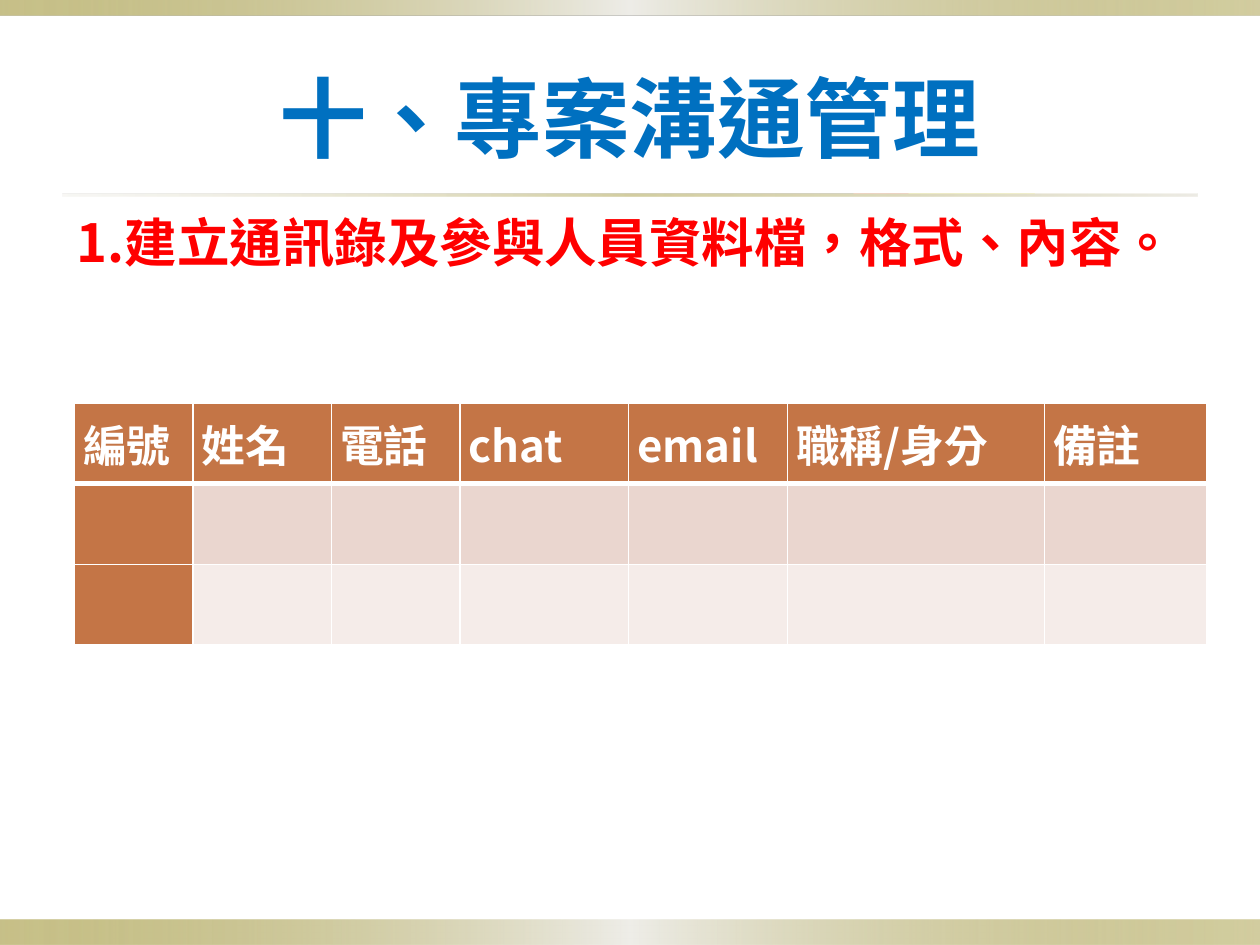
from pptx import Presentation
from pptx.dml.color import RGBColor
from pptx.enum.shapes import MSO_SHAPE
from pptx.enum.text import MSO_ANCHOR, MSO_AUTO_SIZE, PP_ALIGN
from pptx.oxml import parse_xml
from pptx.oxml.ns import nsdecls
from pptx.util import Inches, Pt

FONT = "Noto Sans CJK SC"
LANGUAGE = "zh-TW"
COLORS = {
    "title": "0070C0",
    "body": "FF0000",
    "white": "FFFFFF",
    "header": "C47546",
    "band_dark": "EAD6CF",
    "band_light": "F5ECE9",
    "olive": "918415",
    "pale": "EEEDE8",
    "sand": "DCD9CC",
}

TITLE = "十、專案溝通管理"
BODY = "1.建立通訊錄及參與人員資料檔，格式、內容。"
COLUMNS = [
    ("編號", 0.94), ("姓名", 1.1), ("電話", 1.02), ("chat", 1.34),
    ("email", 1.26), ("職稱/身分", 2.04), ("備註", 1.29),
]
ROW_FILLS = ["header", "band_dark", "band_light"]
ROW_HEIGHT = 0.64

# Gradient stops: position %, colour, opacity %
BAND = [(0, "olive", 50), (50, "pale", 100), (100, "olive", 40)]
RULE = [(0, "sand", 20), (50, "olive", 40), (100, "sand", 50)]
STRIPS = [
    ((0, 7.3, 10, 0.2), BAND),
    ((0, 0, 10, 0.12), BAND),
    ((0.5, 1.54, 9, 0.02), RULE),
]


def color(name):
    return RGBColor.from_string(COLORS[name])


def write(frame, text, size, color_name):
    frame.text = text
    for span in frame.paragraphs[0].runs:
        span.font.name = FONT
        span.font.size = Pt(size)
        span.font.bold = True
        span.font.color.rgb = color(color_name)
        properties = span.font._element
        properties.set("lang", LANGUAGE)
        properties.find("{*}latin").addnext(
            parse_xml(f'<a:ea {nsdecls("a")} typeface="{FONT}"/>'))


def add_strip(slide, place, stops):
    strip = slide.shapes.add_shape(MSO_SHAPE.RECTANGLE, *map(Inches, place))
    strip.shadow.inherit = False
    strip.line.fill.background()
    stop_xml = "".join(
        f'<a:gs pos="{position * 1000}"><a:srgbClr val="{COLORS[name]}">'
        f'<a:alpha val="{opacity * 1000}"/></a:srgbClr></a:gs>'
        for position, name, opacity in stops)
    strip._element.spPr.find("{*}prstGeom").addnext(parse_xml(
        f'<a:gradFill {nsdecls("a")} rotWithShape="1"><a:gsLst>{stop_xml}'
        '</a:gsLst><a:lin ang="0" scaled="0"/></a:gradFill>'))


def add_borders(cell, top, bottom):
    """Draw white cell edges; top and bottom are widths in points."""
    properties = cell._tc.get_or_add_tcPr()
    for side, width in (("L", 1), ("R", 1), ("T", top), ("B", bottom)):
        properties.append(parse_xml(
            f'<a:ln{side} {nsdecls("a")} w="{Pt(width)}"><a:solidFill>'
            f'<a:srgbClr val="{COLORS["white"]}"/></a:solidFill></a:ln{side}>'))


def add_contact_table(slide):
    width = sum(column_width for _, column_width in COLUMNS)
    table = slide.shapes.add_table(
        len(ROW_FILLS), len(COLUMNS), Inches(0.59), Inches(3.2),
        Inches(width), Inches(ROW_HEIGHT * len(ROW_FILLS))).table
    table.first_col = True
    for column, (_, column_width) in zip(table.columns, COLUMNS):
        column.width = Inches(column_width)
    for row_index, fill_name in enumerate(ROW_FILLS):
        for column_index, (heading, _) in enumerate(COLUMNS):
            cell = table.cell(row_index, column_index)
            cell.margin_left = cell.margin_right = Inches(0.07)
            cell.margin_top = cell.margin_bottom = Inches(0.07)
            add_borders(cell, top=3 if row_index == 1 else 1,
                        bottom=3 if row_index == 0 else 1)
            cell.fill.solid()
            cell.fill.fore_color.rgb = color(
                "header" if column_index == 0 else fill_name)
            if row_index == 0:
                write(cell.text_frame, heading, 25, "white")


def main():
    deck = Presentation()
    deck.slide_width, deck.slide_height = Inches(10), Inches(7.5)
    slide = deck.slides.add_slide(deck.slide_layouts[5])
    for place, stops in STRIPS:
        add_strip(slide, place, stops)

    title = slide.shapes.title
    title.left, title.top = Inches(0.5), Inches(0.3)
    title.width, title.height = Inches(9), Inches(1.25)
    write(title.text_frame, TITLE, 50, "title")
    title.text_frame.auto_size = MSO_AUTO_SIZE.NONE
    title.text_frame.vertical_anchor = MSO_ANCHOR.MIDDLE
    title.text_frame.paragraphs[0].alignment = PP_ALIGN.CENTER

    body = slide.shapes.add_textbox(
        Inches(0.51), Inches(1.62), Inches(9), Inches(5.13))
    body.text_frame.word_wrap = True
    write(body.text_frame, BODY, 30, "body")

    add_contact_table(slide)
    deck.save("out.pptx")


if __name__ == "__main__":
    main()
